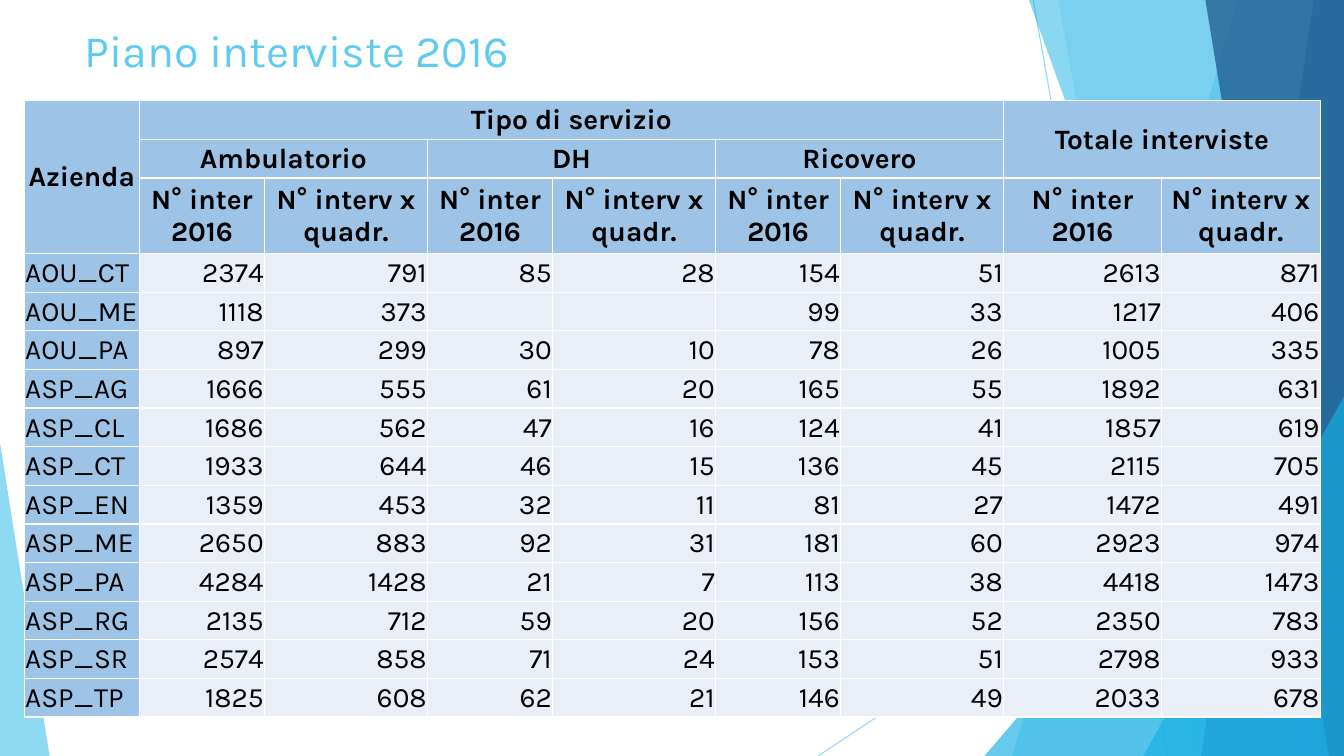
from lxml import etree
from pptx import Presentation
from pptx.dml.color import RGBColor
from pptx.enum.shapes import MSO_CONNECTOR
from pptx.enum.text import MSO_ANCHOR, PP_ALIGN
from pptx.oxml import parse_xml
from pptx.oxml.ns import qn
from pptx.util import Emu, Pt

STRAIGHT = MSO_CONNECTOR.STRAIGHT
TOP, MIDDLE = MSO_ANCHOR.TOP, MSO_ANCHOR.MIDDLE
LEFT, CENTER, RIGHT = PP_ALIGN.LEFT, PP_ALIGN.CENTER, PP_ALIGN.RIGHT

PX = 7620  # 120 px to the inch
WIDTH, HEIGHT = 1600, 900
FONT = "Karla"
COLORS = {
    "sky": "5FCBEF", "cyan": "17B0E4", "blue": "2E83C3", "navy": "236292",
    "header": "9DC3E6", "body": "EAEFF7", "border": "FFFFFF", "text": "000000",
}

# Background: ends of each thin line
THIN_LINES = [((1230, 0), (1390, HEIGHT)), ((WIDTH, 484), (974, HEIGHT))]

# Background: outline, colour and opacity in percent
RIGHT_TOP, RIGHT_BOTTOM = (WIDTH, 0), (WIDTH, HEIGHT)


def right_panel(top_x, bottom_x):
    return [(top_x, 0), RIGHT_TOP, RIGHT_BOTTOM, (bottom_x, HEIGHT)]


def right_corner(left, top):
    return [(left, HEIGHT), (WIDTH, top), RIGHT_BOTTOM]


FACETS = [
    (right_panel(1474, 1205), "sky", 36),
    (right_panel(1260, 1420), "sky", 20),
    (right_corner(1172, 400), "cyan", 66),
    (right_panel(1225, 1549), "cyan", 50),
    (right_panel(1564, 1430), "blue", 70),
    (right_panel(1435, 1582), "navy", 80),
    (right_corner(1361, 472), "cyan", 66),
    ([(0, HEIGHT), (0, 527), (59, HEIGHT)], "sky", 70),
]

# Table: row, column, rows spanned, columns spanned, text
GROUP_HEADERS = [
    (0, 0, 3, 1, "Azienda"),
    (0, 1, 1, 6, "Tipo di servizio"),
    (0, 7, 2, 2, "Totale interviste"),
    (1, 1, 1, 2, "Ambulatorio"),
    (1, 3, 1, 2, "DH"),
    (1, 5, 1, 2, "Ricovero"),
]
MEASURES = ["N° inter 2016", "N° interv x quadr."] * 4
INTERVIEWS = [
    ("AOU_CT", 2374, 791, 85, 28, 154, 51, 2613, 871),
    ("AOU_ME", 1118, 373, "", "", 99, 33, 1217, 406),
    ("AOU_PA", 897, 299, 30, 10, 78, 26, 1005, 335),
    ("ASP_AG", 1666, 555, 61, 20, 165, 55, 1892, 631),
    ("ASP_CL", 1686, 562, 47, 16, 124, 41, 1857, 619),
    ("ASP_CT", 1933, 644, 46, 15, 136, 45, 2115, 705),
    ("ASP_EN", 1359, 453, 32, 11, 81, 27, 1472, 491),
    ("ASP_ME", 2650, 883, 92, 31, 181, 60, 2923, 974),
    ("ASP_PA", 4284, 1428, 21, 7, 113, 38, 4418, 1473),
    ("ASP_RG", 2135, 712, 59, 20, 156, 52, 2350, 783),
    ("ASP_SR", 2574, 858, 71, 24, 153, 51, 2798, 933),
    ("ASP_TP", 1825, 608, 62, 21, 146, 49, 2033, 678),
]
HEADER_ROWS = 3
COLUMN_WIDTHS = [137] + [149, 194] * 3 + [188, 189]
ROW_HEIGHTS = [46, 46, 90] + [46] * len(INTERVIEWS)


def px(length):
    return Emu(length * PX)


def rgb(color):
    return RGBColor.from_string(COLORS[color])


def set_opacity(element, percent):
    for color in element.iter(qn("a:srgbClr")):
        etree.SubElement(color, qn("a:alpha")).set("val", str(percent * 1000))


def add_thin_line(slide, start, end):
    line = slide.shapes.add_connector(STRAIGHT, *map(px, start + end))
    line.line.color.rgb = rgb("sky")
    line.line.width = Pt(0.75)
    properties = line._element.spPr
    set_opacity(properties, 70)
    etree.SubElement(properties, qn("a:effectLst"))


def add_facet(slide, corners, color, opacity):
    builder = slide.shapes.build_freeform(*corners[0], scale=PX)
    builder.add_line_segments(corners[1:], close=True)
    facet = builder.convert_to_shape()
    facet.shadow.inherit = False
    facet.fill.solid()
    facet.fill.fore_color.rgb = rgb(color)
    facet.line.fill.background()
    set_opacity(facet._element.spPr, opacity)


def add_run(paragraph, text, size, color, bold=False):
    run = paragraph.add_run()
    run.text = text
    run.font.name = FONT
    run.font.size = Pt(size)
    run.font.bold = bold
    run.font.color.rgb = rgb(color)


def add_title(slide, text):
    frame = slide.shapes.add_textbox(px(89), px(14), px(1128), px(71)).text_frame
    frame.word_wrap = True
    frame.vertical_anchor = TOP
    frame.margin_top = px(13)
    frame.margin_bottom = 0
    add_run(frame.paragraphs[0], text, 32, "sky")


def set_borders(cell):
    properties = cell._tc.get_or_add_tcPr()
    for index, side in enumerate(("lnL", "lnR", "lnT", "lnB")):
        border = parse_xml(
            f'<a:{side} xmlns:a="http://schemas.openxmlformats.org/drawingml/2006/main"'
            f' w="{Pt(1)}"><a:solidFill><a:srgbClr val="{COLORS["border"]}"/>'
            f'</a:solidFill></a:{side}>')
        properties.insert(index, border)


def format_cell(cell, color):
    cell.fill.solid()
    cell.fill.fore_color.rgb = rgb(color)
    cell.vertical_anchor = MIDDLE
    cell.margin_left = cell.margin_right = cell.margin_top = px(1)
    cell.margin_bottom = 0
    set_borders(cell)


def write_cell(cell, text, align, bold=False):
    paragraph = cell.text_frame.paragraphs[0]
    paragraph.alignment = align
    if text:
        add_run(paragraph, text, 20, "text", bold)


def add_interview_table(slide):
    table = slide.shapes.add_table(
        len(ROW_HEIGHTS), len(COLUMN_WIDTHS), px(29), px(120),
        px(sum(COLUMN_WIDTHS)), px(sum(ROW_HEIGHTS))).table
    for column, width in zip(table.columns, COLUMN_WIDTHS):
        column.width = px(width)
    for row, height in zip(table.rows, ROW_HEIGHTS):
        row.height = px(height)
    for r in range(len(ROW_HEIGHTS)):
        for c in range(len(COLUMN_WIDTHS)):
            is_header = r < HEADER_ROWS or c == 0
            format_cell(table.cell(r, c), "header" if is_header else "body")

    # Column headings
    for r, c, rows, columns, heading in GROUP_HEADERS:
        cell = table.cell(r, c)
        if rows * columns > 1:
            cell.merge(table.cell(r + rows - 1, c + columns - 1))
        write_cell(cell, heading, CENTER, bold=True)
    for c, measure in enumerate(MEASURES, 1):
        write_cell(table.cell(HEADER_ROWS - 1, c), measure, CENTER, bold=True)

    # One row per health authority
    for r, counts in enumerate(INTERVIEWS, HEADER_ROWS):
        for c, count in enumerate(counts):
            write_cell(table.cell(r, c), str(count), RIGHT if c else LEFT)


def main():
    deck = Presentation()
    deck.slide_width, deck.slide_height = px(WIDTH), px(HEIGHT)
    slide = deck.slides.add_slide(deck.slide_layouts[6])

    # Faceted background
    for start, end in THIN_LINES:
        add_thin_line(slide, start, end)
    for corners, color, opacity in FACETS:
        add_facet(slide, corners, color, opacity)

    # Content
    add_title(slide, "Piano interviste 2016")
    add_interview_table(slide)
    deck.save("out.pptx")


if __name__ == "__main__":
    main()
